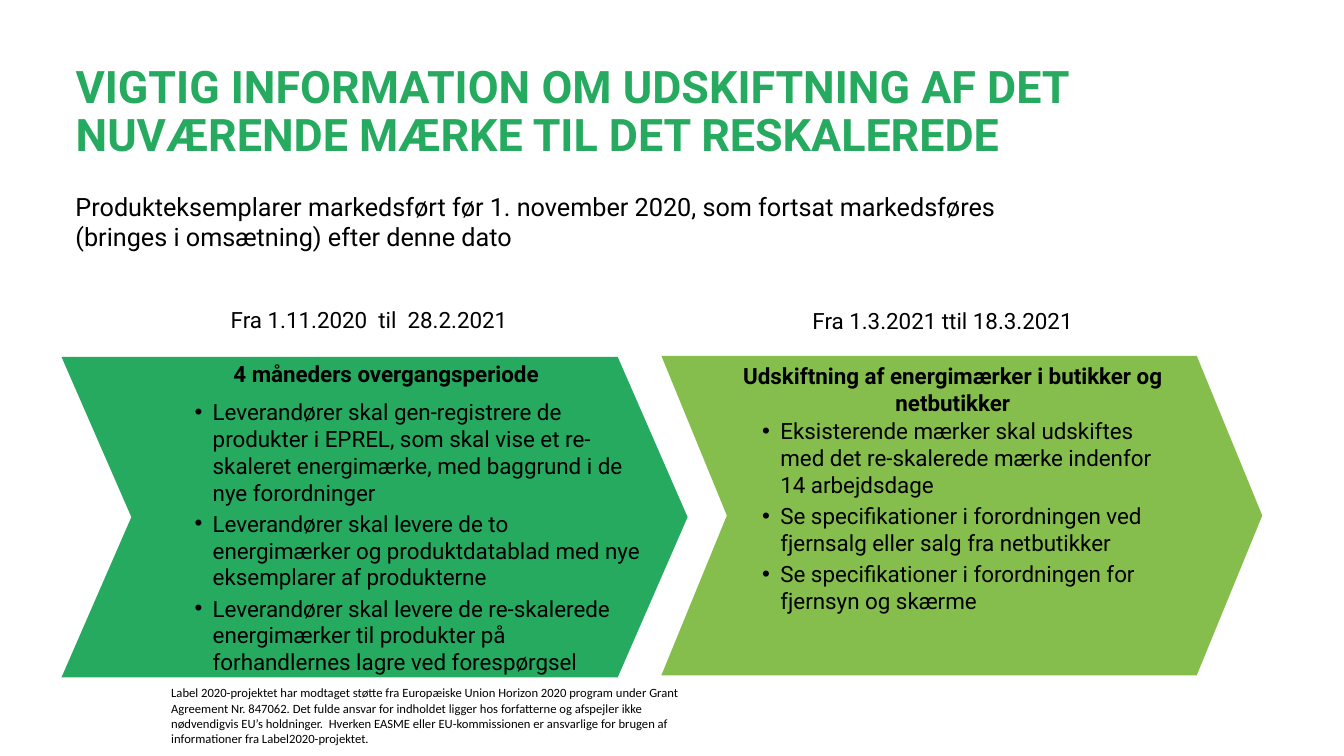
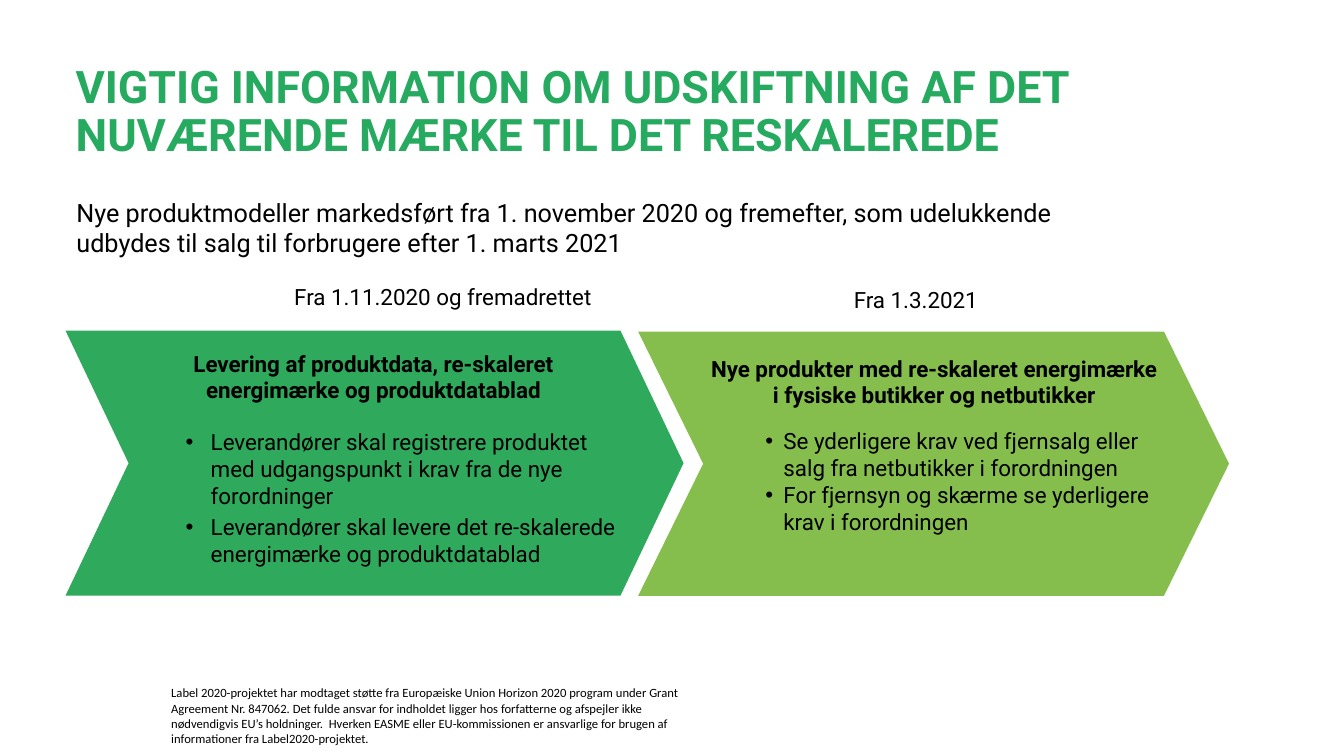
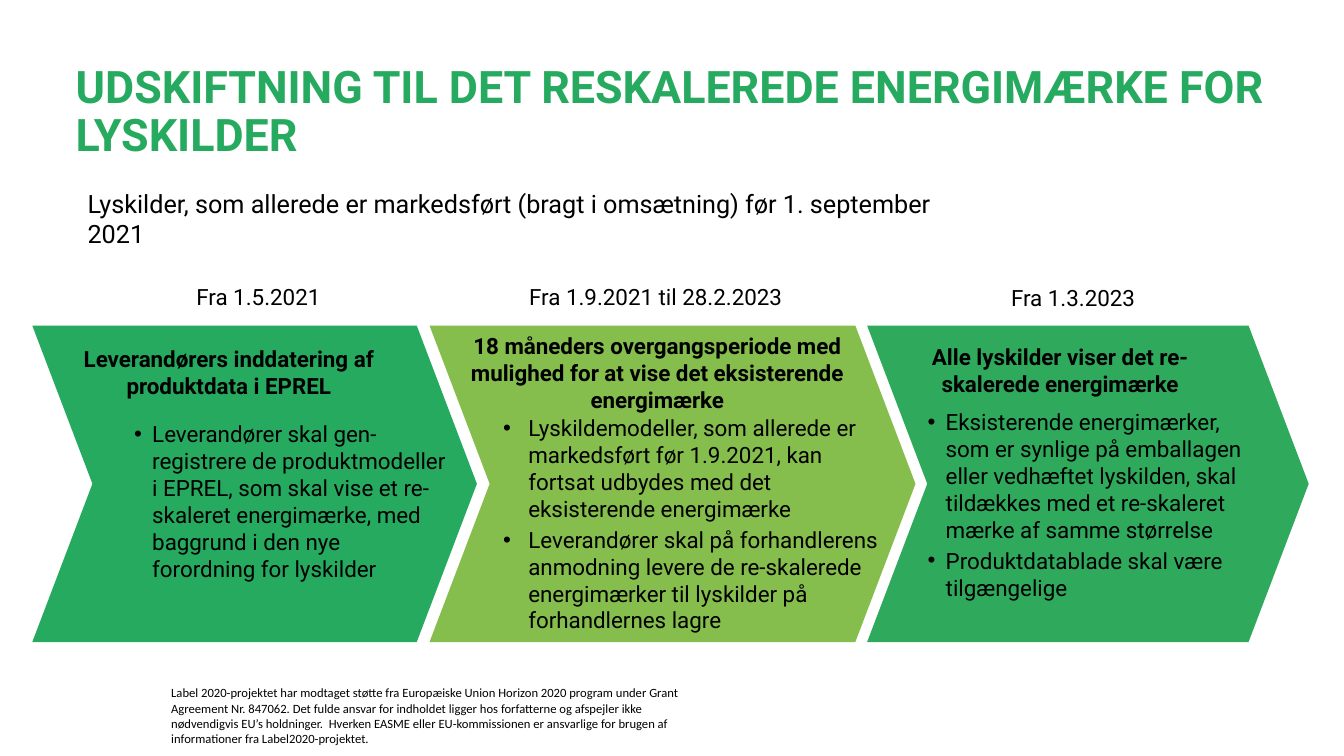
from dataclasses import dataclass

import pptx
import pptx.dml.color
import pptx.enum.shapes
import pptx.enum.text
import pptx.util
from lxml import etree
from pptx.oxml.ns import qn

Inches = pptx.util.Inches
Pt = pptx.util.Pt
ALIGN = pptx.enum.text.PP_ALIGN

COLORS = {"green": "26AA5F", "mid_green": "2FAA5C", "lime": "85BE4C", "text": "000000"}
FONT = "Roboto"
FOOTER_FONT = "Calibri"
FOOTER = (
    "Label 2020-projektet har modtaget støtte fra Europæiske Union Horizon 2020 program "
    "under Grant Agreement Nr. 847062. Det fulde ansvar for indholdet ligger hos forfatterne "
    "og afspejler ikke nødvendigvis EU’s holdninger.  Hverken EASME eller EU-kommissionen er "
    "ansvarlige for brugen af informationer fra Label2020-projektet."
)
REPLACEMENT_TITLE = "VIGTIG INFORMATION OM UDSKIFTNING AF DET NUVÆRENDE MÆRKE TIL DET RESKALEREDE"


@dataclass
class Stage:
    """One chevron; the date, heading and list places are (left, top, width) from its corner."""
    box: tuple
    fill: str
    point: float
    date: str
    date_at: tuple
    heading: str
    heading_at: tuple
    items: list
    list_at: tuple
    indent: tuple = (0.38, 0.18)
    gap: float = 3


def rgb(name):
    return pptx.dml.color.RGBColor.from_string(COLORS[name])


def place(shape, left, top, width, height):
    shape.left, shape.top = Inches(left), Inches(top)
    shape.width, shape.height = Inches(width), Inches(height)


def write(p, text, size=16, bold=False, color="text", font=FONT, align=ALIGN.LEFT):
    """Fill a paragraph; each newline in the text becomes a line break."""
    p.alignment = align
    p.space_before = Pt(0)
    for i, line in enumerate(text.split("\n")):
        if i:
            p.add_line_break()
        r = p.add_run()
        r.text = line
        r.font.name, r.font.size, r.font.bold = font, Pt(size), bold
        r.font.color.rgb = rgb(color)


def prepare(tf):
    tf.word_wrap = True
    tf.auto_size = pptx.enum.text.MSO_AUTO_SIZE.NONE
    tf.vertical_anchor = pptx.enum.text.MSO_ANCHOR.TOP
    return tf


def add_text(s, box, text, **style):
    tb = s.shapes.add_textbox(*(Inches(v) for v in box))
    write(prepare(tb.text_frame).paragraphs[0], text, **style)


def add_title(s, text):
    title = s.shapes.title
    place(title, 0.65, 0.59, 12.01, 1.26)
    p = prepare(title.text_frame).paragraphs[0]
    p.line_spacing = 0.9
    write(p, text, size=32, bold=True, color="green")


def fill_list(ph, box, items, indent, gap):
    place(ph, *box)
    tf = prepare(ph.text_frame)
    for i, item in enumerate(items):
        p = tf.add_paragraph() if i else tf.paragraphs[0]
        pPr = p._p.get_or_add_pPr()
        pPr.set("marL", str(Inches(indent[0])))
        pPr.set("indent", str(-Inches(indent[1])))
        etree.SubElement(pPr, qn("a:buChar")).set("char", "•")
        p.space_after = Pt(gap)
        write(p, item)


def add_stage(s, ph, stage):
    left, top, width, height = stage.box

    def inside(at, h):
        return left + at[0], top + at[1], at[2], h

    chevron = s.shapes.add_shape(
        pptx.enum.shapes.MSO_SHAPE.CHEVRON, *(Inches(v) for v in stage.box))
    chevron.adjustments[0] = stage.point
    chevron.shadow.inherit = False
    chevron.fill.solid()
    chevron.fill.fore_color.rgb = rgb(stage.fill)
    chevron.line.fill.background()

    add_text(s, inside(stage.date_at, 0.37), stage.date)
    add_text(s, inside(stage.heading_at, 0.64), stage.heading, bold=True, align=ALIGN.CENTER)
    s.shapes._spTree.append(ph._element)  # bring the list in front of its chevron
    fill_list(ph, inside(stage.list_at, height - stage.list_at[1]),
              stage.items, stage.indent, stage.gap)


def add_timeline_slide(prs, title, intro, intro_at, stages):
    s = prs.slides.add_slide(prs.slide_layouts.get_by_name("Comparison"))
    bodies = [ph for ph in s.placeholders if ph.placeholder_format.idx != 0]
    add_text(s, (1.6, 6.75, 5.37, 0.7), FOOTER, size=9, font=FOOTER_FONT)
    add_title(s, title)
    add_text(s, (*intro_at, 0.71), intro, size=18)
    for ph, stage in zip(bodies, stages):
        add_stage(s, ph, stage)
    for ph in bodies[len(stages):]:
        s.shapes._spTree.remove(ph._element)


EXISTING_PRODUCTS = [
    Stage((0.61, 3.54, 6.21, 3.18), "green", 0.218,
          "Fra 1.11.2020  til  28.2.2021", (1.58, -0.55, 3.65),
          "4 måneders overgangsperiode", (1.58, -0.02, 3.28),
          ["Leverandører skal gen-registrere de produkter i EPREL, som skal vise et re-skaleret "
           "energimærke, med baggrund i de nye forordninger",
           "Leverandører skal levere de to energimærker og produktdatablad med nye eksemplarer "
           "af produkterne",
           "Leverandører skal levere de re-skalerede energimærker til produkter på "
           "forhandlernes lagre ved forespørgsel"],
          (1.02, 0.36, 4.82)),
    Stage((6.56, 3.53, 5.96, 3.17), "lime", 0.205,
          "Fra 1.3.2021 ttil 18.3.2021", (1.4, -0.53, 3.34),
          "Udskiftning af energimærker i butikker og netbutikker", (0.15, 0.01, 5.48),
          ["Eksisterende mærker skal udskiftes med det re-skalerede mærke indenfor "
           "14 arbejdsdage",
           "Se specifikationer i forordningen ved fjernsalg eller salg fra netbutikker",
           "Se specifikationer i forordningen for fjernsyn og skærme"],
          (0.7, 0.56, 4.44)),
]

NEW_PRODUCTS = [
    Stage((0.65, 3.28, 6.13, 2.63), "mid_green", 0.238,
          "Fra 1.11.2020 og fremadrettet", (2.17, -0.52, 3.2),
          "Levering af produktdata, re-skaleret energimærke og produktdatablad",
          (1.13, 0.14, 3.85),
          ["Leverandører skal registrere produktet med udgangspunkt i krav fra de nye "
           "forordninger",
           "Leverandører skal levere det re-skalerede energimærke og produktdatablad"],
          (0.84, 0.92, 4.83), indent=(0.5, 0.25)),
    Stage((6.33, 3.29, 5.86, 2.62), "lime", 0.246,
          "Fra 1.3.2021", (2.04, -0.5, 1.46),
          "Nye produkter med re-skaleret energimærke\ni fysiske butikker og netbutikker",
          (0.56, 0.18, 4.75),
          ["Se yderligere krav ved fjernsalg eller salg fra netbutikker i forordningen",
           "For fjernsyn og skærme se yderligere krav i forordningen"],
          (0.96, 0.9, 4.31), gap=0),
]

LIGHT_SOURCES = [
    Stage((0.32, 3.23, 4.41, 3.14), "green", 0.19,
          "Fra 1.5.2021", (1.53, -0.47, 1.46),
          "Leverandørers inddatering af produktdata i EPREL", (0.2, 0.15, 3.5),
          ["Leverandører skal gen-registrere de produktmodeller i EPREL, som skal vise et "
           "re-skaleret energimærke, med baggrund i den nye\nforordning for lyskilder"],
          (0.71, 0.89, 3.55), gap=0),
    Stage((4.26, 3.23, 4.82, 3.14), "lime", 0.19,
          "Fra 1.9.2021 til 28.2.2023", (0.89, -0.47, 2.75),
          "18 måneders overgangsperiode med\nmulighed for at vise det eksisterende\nenergimærke",
          (0.28, 0.02, 3.96),
          ["Lyskildemodeller, som allerede er markedsført før 1.9.2021, kan fortsat udbydes "
           "med det eksisterende energimærke",
           "Leverandører skal på forhandlerens anmodning levere de re-skalerede energimærker "
           "til lyskilder på\nforhandlernes lagre"],
          (0.38, 0.83, 4.32), indent=(0.5, 0.25)),
    Stage((8.6, 3.23, 4.38, 3.14), "mid_green", 0.19,
          "Fra 1.3.2023", (1.33, -0.46, 1.46),
          "Alle lyskilder viser det re-skalerede energimærke", (0.06, 0.13, 3.71),
          ["Eksisterende energimærker,\nsom er synlige på emballagen eller vedhæftet "
           "lyskilden, skal tildækkes med et re-skaleret mærke af samme størrelse",
           "Produktdatablade skal være tilgængelige"],
          (0.3, 0.77, 3.7)),
]


def main():
    prs = pptx.Presentation()
    prs.slide_width, prs.slide_height = Inches(13.33), Inches(7.5)
    add_timeline_slide(
        prs, REPLACEMENT_TITLE,
        "Produkteksemplarer markedsført før 1. november 2020, som fortsat markedsføres\n"
        "(bringes i omsætning) efter denne dato",
        (0.65, 1.85, 10.98), EXISTING_PRODUCTS)
    add_timeline_slide(
        prs, REPLACEMENT_TITLE,
        "Nye produktmodeller markedsført fra 1. november 2020 og fremefter, som udelukkende\n"
        "udbydes til salg til forbrugere efter 1. marts 2021",
        (0.66, 1.91, 11.9), NEW_PRODUCTS)
    add_timeline_slide(
        prs, "UDSKIFTNING TIL DET RESKALEREDE ENERGIMÆRKE FOR LYSKILDER",
        "Lyskilder, som allerede er markedsført (bragt i omsætning) før 1. september 2021",
        (0.77, 1.82, 9), LIGHT_SOURCES)
    prs.save("out.pptx")


if __name__ == "__main__":
    main()
